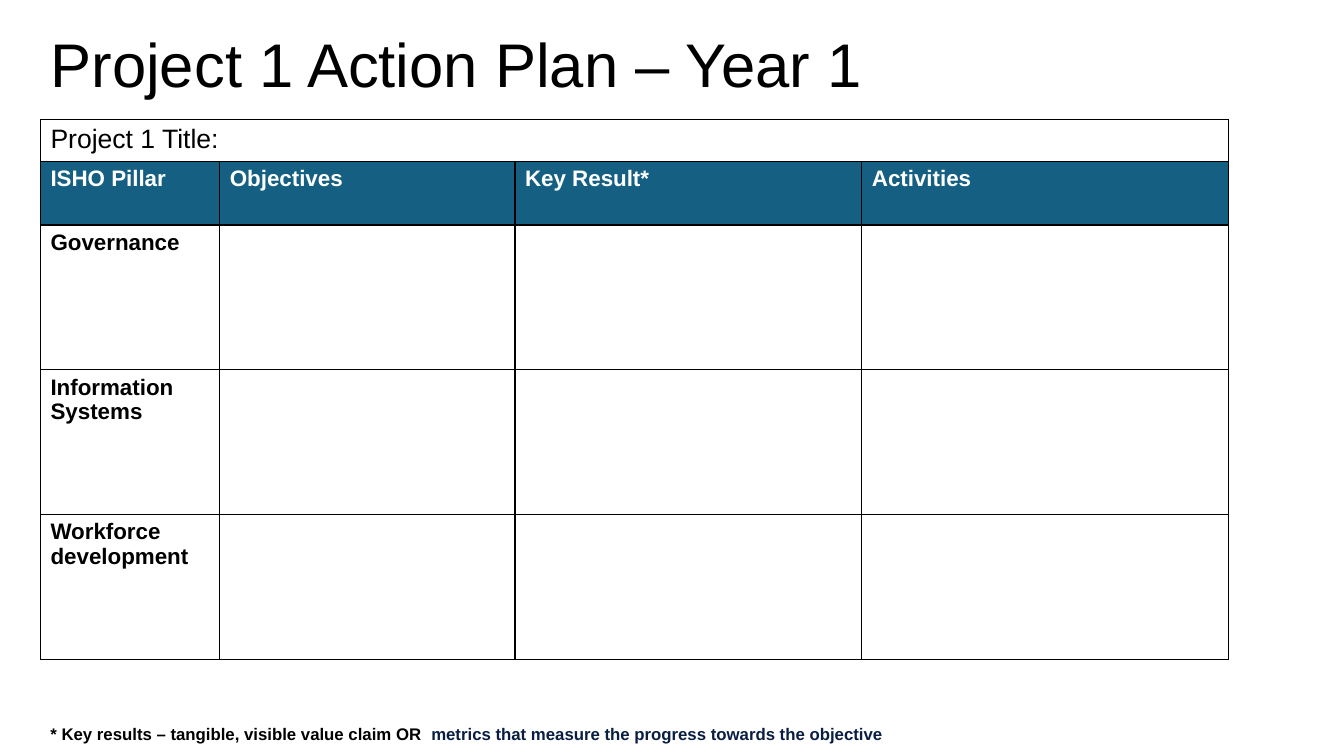
from lxml.etree import SubElement
from pptx import Presentation
from pptx.dml.color import RGBColor
from pptx.enum.text import MSO_ANCHOR, MSO_AUTO_SIZE, PP_ALIGN
from pptx.oxml.ns import qn
from pptx.util import Cm, Pt

HUES = {"ink": "000000", "white": "FFFFFF", "head": "156082", "navy": "091E42"}
LEFT = Cm(1.02)
COLS = [4.52, 7.44, 8.74, 9.24]
ROWS = [1.05, 1.6] + [3.65] * 3
HEADS = ["ISHO Pillar", "Objectives", "Key Result*", "Activities"]
PILLARS = ["Governance", "Information Systems", "Workforce development"]


def add_run(para, text, size, hue="ink", bold=False):
    run = para.add_run()
    run.text = text
    font = run.font
    font.name = "Arial"
    font.size = Pt(size)
    font.bold = bold
    font.color.rgb = RGBColor.from_string(HUES[hue])


def add_edges(cell):
    """Draw a thin dark line on all four sides of a cell."""
    props = cell._tc.get_or_add_tcPr()
    for side in ("lnL", "lnR", "lnT", "lnB"):
        line = SubElement(props, qn(f"a:{side}"), w=str(Pt(1)))
        fill = SubElement(line, qn("a:solidFill"))
        SubElement(fill, qn("a:srgbClr"), val=HUES["ink"])


def set_title(slide, text):
    title = slide.shapes.title
    title.left, title.top = LEFT, Cm(-0.13)
    title.width, title.height = Cm(29.21), Cm(3.68)
    frame = title.text_frame
    frame.auto_size = MSO_AUTO_SIZE.NONE
    frame.vertical_anchor = MSO_ANCHOR.MIDDLE
    para = frame.paragraphs[0]
    para.alignment = PP_ALIGN.LEFT
    para.line_spacing = 0.9
    add_run(para, text, 44)


def add_plan(slide):
    frame = slide.shapes.add_table(len(ROWS), len(COLS), LEFT, Cm(3.02),
                                   Cm(sum(COLS)), Cm(sum(ROWS)))
    table = frame.table
    table.first_row = table.horz_banding = False
    for col, width in zip(table.columns, COLS):
        col.width = Cm(width)
    for row, height in zip(table.rows, ROWS):
        row.height = Cm(height)
    for cell in table.iter_cells():
        add_edges(cell)
        cell.fill.background()

    top = table.cell(0, 0)
    top.merge(table.cell(0, len(COLS) - 1))
    add_run(top.text_frame.paragraphs[0], "Project 1 Title:", 19)
    for col, text in enumerate(HEADS):
        cell = table.cell(1, col)
        cell.fill.solid()
        cell.fill.fore_color.rgb = RGBColor.from_string(HUES["head"])
        add_run(cell.text_frame.paragraphs[0], text, 16, "white", True)
    for row, text in enumerate(PILLARS, 2):
        para = table.cell(row, 0).text_frame.paragraphs[0]
        add_run(para, text, 16, bold=True)


def add_note(slide, parts):
    box = slide.shapes.add_textbox(LEFT, Cm(18.11), Cm(27.94), Cm(0.76))
    frame = box.text_frame
    frame.word_wrap = True
    frame.auto_size = MSO_AUTO_SIZE.SHAPE_TO_FIT_TEXT
    for text, hue in parts:
        add_run(frame.paragraphs[0], text, 12, hue, True)


def main():
    deck = Presentation()
    deck.slide_width, deck.slide_height = Cm(33.87), Cm(19.05)
    slide = deck.slides.add_slide(deck.slide_layouts[5])
    set_title(slide, "Project 1 Action Plan – Year 1")
    add_plan(slide)
    add_note(slide, [
        ("* Key results – tangible, visible value claim OR  ", "ink"),
        ("metrics that measure the progress towards the objective", "navy"),
    ])
    deck.save("out.pptx")


if __name__ == "__main__":
    main()
